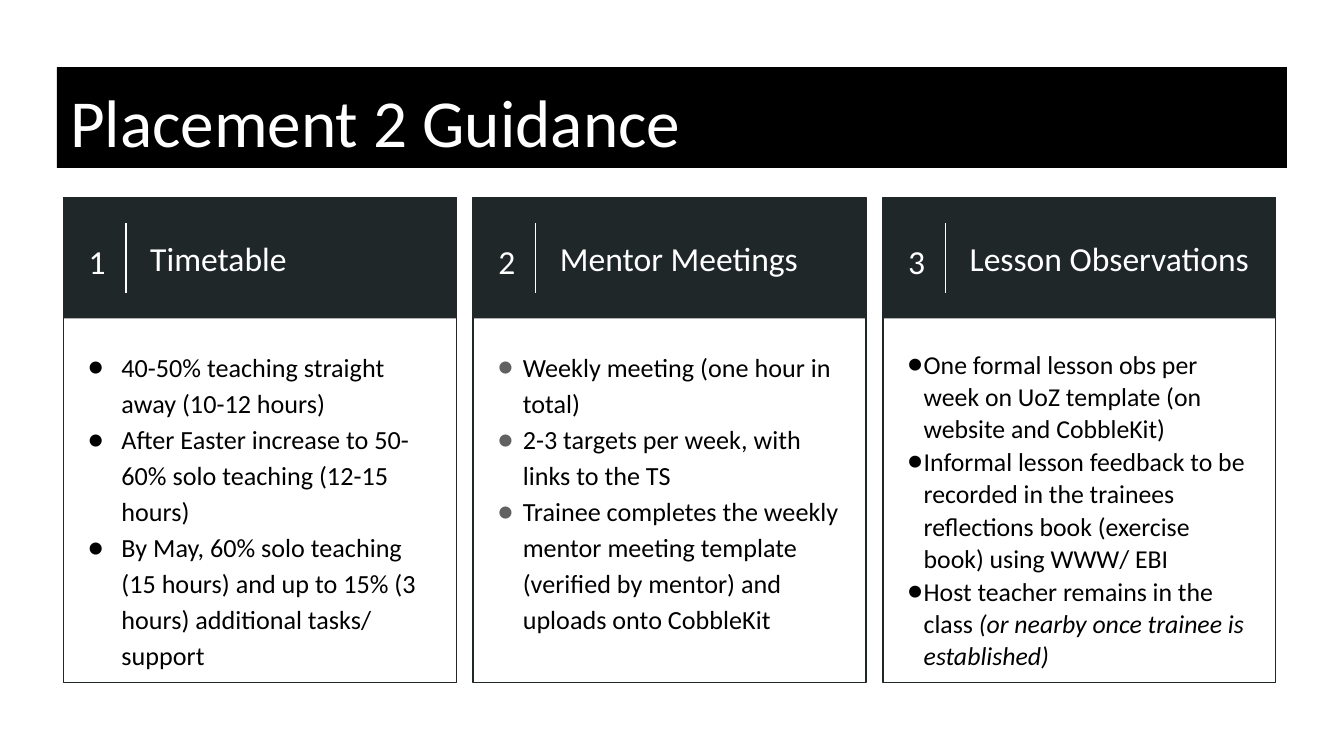
from dataclasses import dataclass

from lxml.etree import SubElement
from pptx import Presentation
from pptx.dml.color import RGBColor
from pptx.enum.shapes import MSO_CONNECTOR, MSO_SHAPE
from pptx.enum.text import MSO_ANCHOR, PP_ALIGN
from pptx.oxml.ns import qn
from pptx.shapes.autoshape import Shape
from pptx.slide import Slide
from pptx.text.text import TextFrame, _Paragraph
from pptx.util import Pt

BLACK = RGBColor(0x00, 0x00, 0x00)
WHITE = RGBColor(0xFF, 0xFF, 0xFF)
CHARCOAL = RGBColor(0x20, 0x27, 0x29)
GREY = RGBColor(0x61, 0x61, 0x61)
FONT = "Calibri"

# Column grid, in points
FIRST_LEFT = 34
COLUMN_PITCH = 219.5
COLUMN_WIDTH = 210.5
COLUMN_TOP = 105.8
COLUMN_HEIGHT = 260
HEADER_HEIGHT = 64.8


@dataclass(frozen=True)
class Run:
    text: str
    italic: bool = False


@dataclass(frozen=True)
class Column:
    heading: str
    bullets: list[list[Run]]
    indent: float
    hanging: float
    size: float = 14
    line_spacing: float = 1.15
    bullet_color: RGBColor = BLACK


COLUMNS = [
    Column("Timetable", [
        [Run("40-50% teaching straight away (10-12 hours)")],
        [Run("After Easter increase to 50-60% solo teaching (12-15 hours)")],
        [Run("By May, 60% solo teaching (15 hours) and up to 15% (3 hours) "
             "additional tasks/ support")],
    ], indent=18, hanging=20),
    Column("Mentor Meetings", [
        [Run("Weekly meeting (one hour in total)")],
        [Run("2-3 targets per week, with links to the TS")],
        [Run("Trainee completes the weekly mentor meeting template "
             "(verified by mentor) and uploads onto CobbleKit")],
    ], indent=13.5, hanging=15.8, bullet_color=GREY),
    Column("Lesson Observations", [
        [Run("One formal lesson obs per week on UoZ template "
             "(on website and CobbleKit)")],
        [Run("Informal lesson feedback to be recorded in the trainees "
             "reflections book (exercise book) using WWW/ EBI")],
        [Run("Host teacher remains in the class "),
         Run("(or nearby once trainee is established)", italic=True)],
    ], indent=8.8, hanging=11.5, size=13.8, line_spacing=1.05),
]


def add_rectangle(slide: Slide, left: float, top: float, width: float, height: float,
                  fill: RGBColor | None = None, line: RGBColor | None = None) -> Shape:
    shape = slide.shapes.add_shape(MSO_SHAPE.RECTANGLE, Pt(left), Pt(top), Pt(width), Pt(height))
    shape.shadow.inherit = False
    if fill is None:
        shape.fill.background()
    else:
        shape.fill.solid()
        shape.fill.fore_color.rgb = fill
    if line is None:
        shape.line.fill.background()
    else:
        shape.line.color.rgb = line
        shape.line.width = Pt(0.75)
    return shape


def prepare_frame(shape: Shape, anchor: MSO_ANCHOR) -> TextFrame:
    frame = shape.text_frame
    frame.word_wrap = True
    frame.vertical_anchor = anchor
    frame.margin_left = frame.margin_right = Pt(7.2)
    frame.margin_top = frame.margin_bottom = Pt(7.2)
    return frame


def add_text_box(slide: Slide, left: float, top: float, width: float, height: float,
                 anchor: MSO_ANCHOR) -> TextFrame:
    shape = slide.shapes.add_textbox(Pt(left), Pt(top), Pt(width), Pt(height))
    return prepare_frame(shape, anchor)


def write_runs(paragraph: _Paragraph, runs: list[Run], size: float, color: RGBColor,
               alignment: PP_ALIGN = PP_ALIGN.LEFT) -> None:
    paragraph.alignment = alignment
    for item in runs:
        run = paragraph.add_run()
        run.text = item.text
        run.font.name = FONT
        run.font.size = Pt(size)
        run.font.color.rgb = color
        if item.italic:
            run.font.italic = True


def set_bullet(paragraph: _Paragraph, column: Column) -> None:
    properties = paragraph._p.get_or_add_pPr()
    properties.set("marL", str(Pt(column.indent)))
    properties.set("indent", str(-Pt(column.hanging)))
    bullet_color = SubElement(properties, qn("a:buClr"))
    SubElement(bullet_color, qn("a:srgbClr"), val=str(column.bullet_color))
    SubElement(properties, qn("a:buFont"), typeface=FONT)
    SubElement(properties, qn("a:buChar"), char="●")


def add_divider(slide: Slide, x: float, top: float, bottom: float) -> None:
    connector = slide.shapes.add_connector(
        MSO_CONNECTOR.STRAIGHT, Pt(x), Pt(top), Pt(x), Pt(bottom))
    connector.line.color.rgb = WHITE
    connector.line.width = Pt(0.75)
    SubElement(connector._element.spPr, qn("a:effectLst"))


def add_title(slide: Slide, text: str) -> None:
    banner = add_rectangle(slide, 30.5, 36, 659, 54, fill=BLACK)
    frame = prepare_frame(banner, MSO_ANCHOR.TOP)
    write_runs(frame.paragraphs[0], [Run(text)], 36, WHITE)


def add_column(slide: Slide, index: int, column: Column) -> None:
    left = FIRST_LEFT + index * COLUMN_PITCH

    # Frame and header band
    add_rectangle(slide, left, COLUMN_TOP, COLUMN_WIDTH, COLUMN_HEIGHT, line=CHARCOAL)
    add_rectangle(slide, left, COLUMN_TOP, COLUMN_WIDTH, HEADER_HEIGHT, fill=CHARCOAL)

    # Number, divider and heading
    number = add_text_box(slide, left + 4.3, COLUMN_TOP, 27.4, HEADER_HEIGHT, MSO_ANCHOR.MIDDLE)
    write_runs(number.paragraphs[0], [Run(str(index + 1))], 18, WHITE, PP_ALIGN.CENTER)
    number.paragraphs[0].line_spacing = 1.15
    add_divider(slide, left + 33.5, 119.5, 157)
    heading = add_text_box(slide, left + 39.4, COLUMN_TOP, 168, HEADER_HEIGHT, MSO_ANCHOR.MIDDLE)
    write_runs(heading.paragraphs[0], [Run(column.heading)], 18, WHITE)

    # Bulleted guidance
    body = add_text_box(slide, left + 6, 178.6, 199.4, 187.2, MSO_ANCHOR.TOP)
    for position, runs in enumerate(column.bullets):
        paragraph = body.add_paragraph() if position else body.paragraphs[0]
        write_runs(paragraph, runs, column.size, BLACK)
        paragraph.line_spacing = column.line_spacing
        set_bullet(paragraph, column)


def main() -> None:
    presentation = Presentation()
    presentation.slide_width = Pt(720)
    presentation.slide_height = Pt(405)
    slide = presentation.slides.add_slide(presentation.slide_layouts[6])
    add_title(slide, "Placement 2 Guidance")
    for index, column in enumerate(COLUMNS):
        add_column(slide, index, column)
    presentation.save("out.pptx")


if __name__ == "__main__":
    main()
